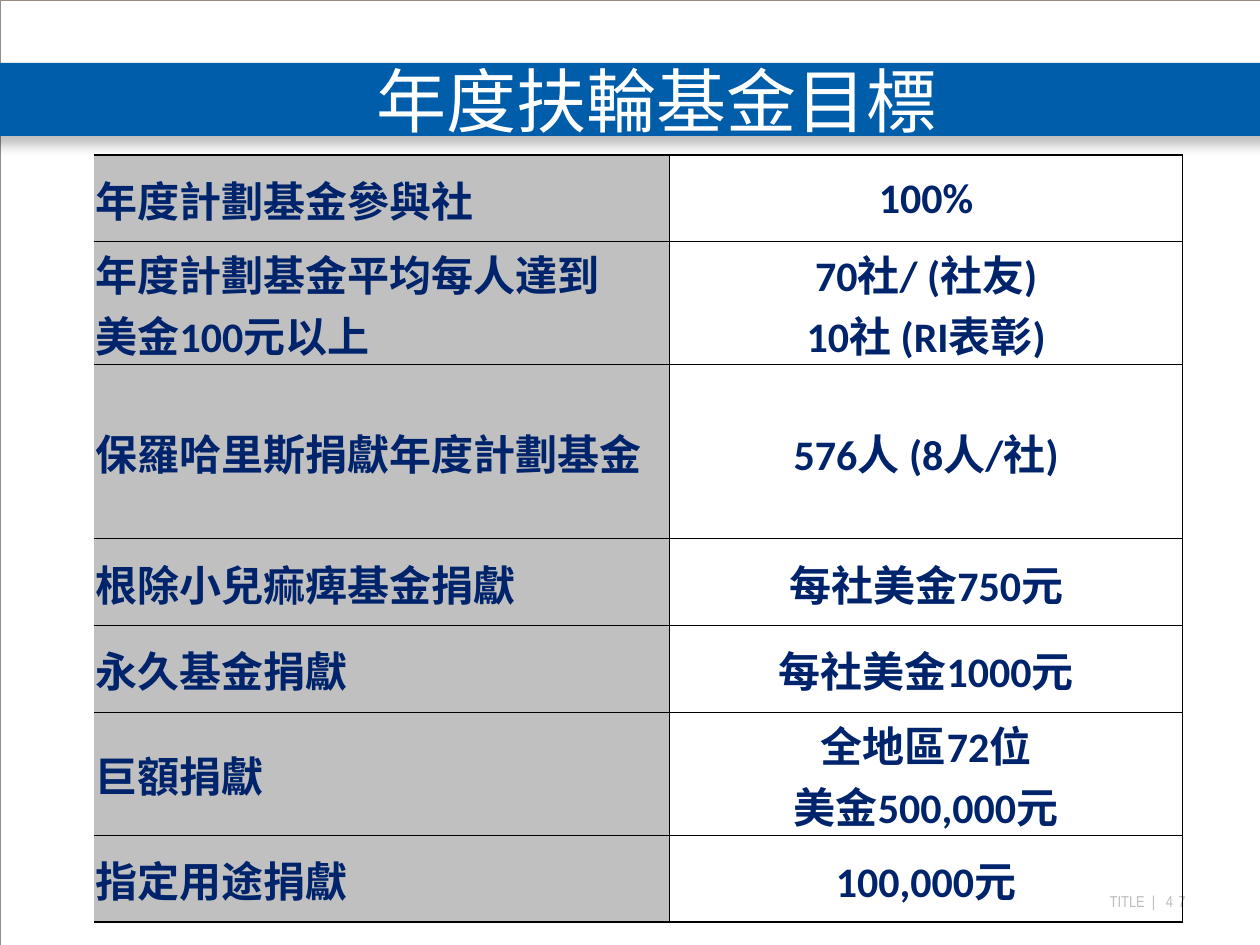
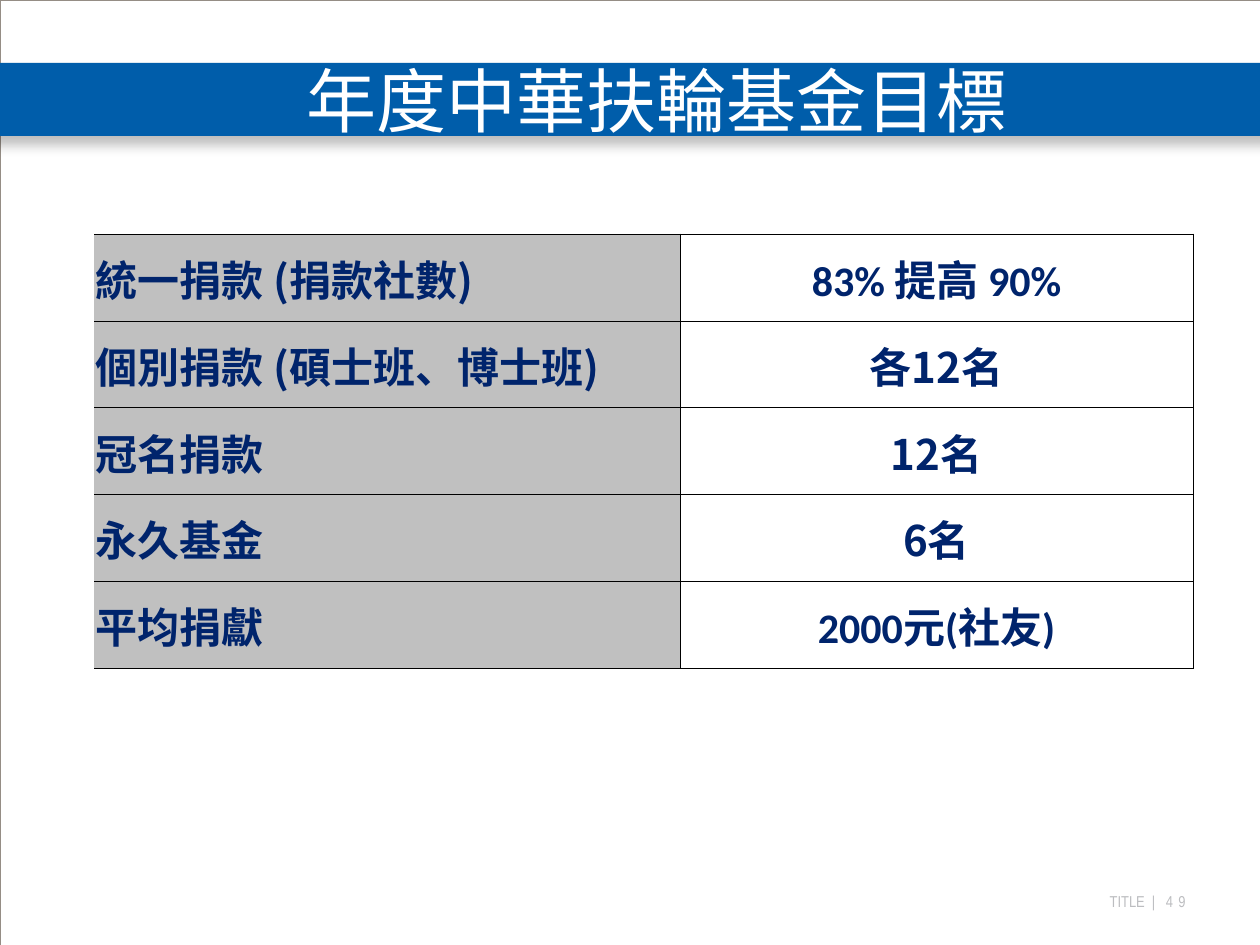
"""Build two slides of yearly foundation goals, each a banded title over a table."""
from lxml.etree import SubElement
from pptx import Presentation
from pptx.dml.color import RGBColor
from pptx.enum.shapes import MSO_SHAPE
from pptx.enum.text import MSO_ANCHOR, PP_ALIGN
from pptx.oxml import parse_xml
from pptx.oxml.ns import nsdecls, qn
from pptx.util import Cm, Pt

HUES = {"band": "005DAA", "frame": "958D85", "white": "FFFFFF", "foot": "BCBDC0",
        "navy": "00246C", "label": "C0C0C0", "rule": "000000"}
CJK = "Noto Sans CJK SC"
LATIN = "Calibri"
WIDE, HIGH = 25.4, 19.05
LOW, MID, TALL = 1.75, 2.48, 3.51
PLAIN = "{2D5ABB26-0587-4C30-8999-92F81FD0307C}"

DECK = [
    {"title": "年度扶輪基金目標", "page": "47", "top": 3.12, "cols": [11.6, 10.34], "edge": 1,
     "rows": [
         (LOW, "年度計劃基金參與社", "|100%"),
         (MID, "年度計劃基金平均每人達到\n美金|100|元以上", "|70社/ (社友)\n|10社 (RI表彰)"),
         (TALL, "保羅哈里斯捐獻年度計劃基金", "|576人 (8人/社)"),
         (LOW, "根除小兒痲痺基金捐獻", "每社美金|750元"),
         (LOW, "永久基金捐獻", "每社美金|1000元"),
         (MID, "巨額捐獻", "全地區|72位\n美金|500,000元"),
         (LOW, "指定用途捐獻", "|100,000元")]},
    {"title": "年度中華扶輪基金目標", "page": "49", "top": 4.72, "cols": [11.81, 10.34], "edge": 0.5,
     "rows": [
         (LOW, "統一捐款 (捐款社數)", "|83% |提高 |90%"),
         (LOW, "個別捐款 (碩士班、博士班)", "各12名"),
         (LOW, "冠名捐款", "12名"),
         (LOW, "永久基金", "6名"),
         (LOW, "平均捐獻", "|2000元(社友)")]},
]


def write(frame, text, size, hue, align, fonts=(CJK, LATIN), bold=False, gaps=()):
    """Write lines of text, switching between two fonts at each bar."""
    frame.word_wrap = True
    for row, line in enumerate(text.split("\n")):
        para = frame.paragraphs[0] if row == 0 else frame.add_paragraph()
        para.alignment = align
        for spot, part in enumerate(line.split("|")):
            if not part:
                continue
            run = para.add_run()
            run.text = part.replace("¦", "|")
            font = run.font
            font.size, font.bold, font.name = Pt(size), bold, fonts[spot % 2]
            font.color.rgb = RGBColor.from_string(HUES[hue])
            props = run._r.get_or_add_rPr()
            SubElement(props, qn("a:ea")).set("typeface", CJK)
            if gaps:
                props.set("spc", str(gaps[spot]))


def place(slide, left, top, width, height):
    """Add a text box with no margins, centred in height."""
    frame = slide.shapes.add_textbox(Cm(left), Cm(top), Cm(width), Cm(height)).text_frame
    frame.margin_left = frame.margin_right = frame.margin_top = frame.margin_bottom = 0
    frame.vertical_anchor = MSO_ANCHOR.MIDDLE
    return frame


deck = Presentation()
deck.slide_width, deck.slide_height = Cm(WIDE), Cm(HIGH)

for page in DECK:
    slide = deck.slides.add_slide(deck.slide_layouts[6])

    foot = place(slide, 19.69, 17.98, 4.21, 0.38)
    write(foot, f"TITLE| ¦ |{page['page']}", 9, "foot", PP_ALIGN.RIGHT,
          fonts=("Arial Narrow", "Arial Narrow"), gaps=(0, 200, 300))

    frame = slide.shapes.add_shape(MSO_SHAPE.RECTANGLE, 0, 0, Cm(WIDE), Cm(HIGH))
    frame.shadow.inherit = False
    frame.fill.background()
    frame.line.color.rgb = RGBColor.from_string(HUES["frame"])
    frame.line.width = Pt(0.13)

    band = slide.shapes.add_shape(MSO_SHAPE.RECTANGLE, Cm(-0.2), Cm(1.27), Cm(25.83), Cm(1.47))
    band.shadow.inherit = False
    band.fill.solid()
    band.fill.fore_color.rgb = RGBColor.from_string(HUES["band"])
    band.line.fill.background()
    glow = band._element.spPr.find(qn("a:effectLst"))
    glow.append(parse_xml(
        f'<a:outerShdw {nsdecls("a")} blurRad="{Pt(7)}" dist="{Pt(4.8)}" dir="5400000" '
        f'algn="t" rotWithShape="0"><a:srgbClr val="{HUES["rule"]}">'
        '<a:alpha val="25000"/></a:srgbClr></a:outerShdw>'))

    head = place(slide, 1.07, 1.27, 24.33, 1.47)
    write(head, page["title"], 40, "white", PP_ALIGN.CENTER)

    rows, cols = page["rows"], page["cols"]
    grid = slide.shapes.add_table(len(rows), len(cols), Cm(1.9), Cm(page["top"]),
                                  Cm(sum(cols)), Cm(sum(row[0] for row in rows))).table
    grid.first_row = grid.horz_banding = False
    grid._tbl.tblPr.find(qn("a:tableStyleId")).text = PLAIN
    for col, width in enumerate(cols):
        grid.columns[col].width = Cm(width)
    for row, (height, *texts) in enumerate(rows):
        grid.rows[row].height = Cm(height)
        for col, text in enumerate(texts):
            cell = grid.cell(row, col)
            cell.margin_left = cell.margin_right = cell.margin_top = Cm(0.03)
            cell.margin_bottom = 0
            cell.vertical_anchor = MSO_ANCHOR.MIDDLE
            write(cell.text_frame, text, 24, "navy",
                  PP_ALIGN.CENTER if col else PP_ALIGN.LEFT, bold=True)
            sides = {"L": 0.5 if col else 0, "R": 0.5,
                     "T": page["edge"] if row == 0 else 0.5,
                     "B": page["edge"] if row == len(rows) - 1 else 0.5}
            for side, width in sides.items():
                line = SubElement(cell._tc.get_or_add_tcPr(), qn(f"a:ln{side}"), w=str(Pt(width)))
                if width:
                    fill = SubElement(line, qn("a:solidFill"))
                    SubElement(fill, qn("a:srgbClr"), val=HUES["rule"])
                else:
                    SubElement(line, qn("a:noFill"))
            if col:
                cell.fill.background()
            else:
                cell.fill.solid()
                cell.fill.fore_color.rgb = RGBColor.from_string(HUES["label"])

deck.save("out.pptx")
